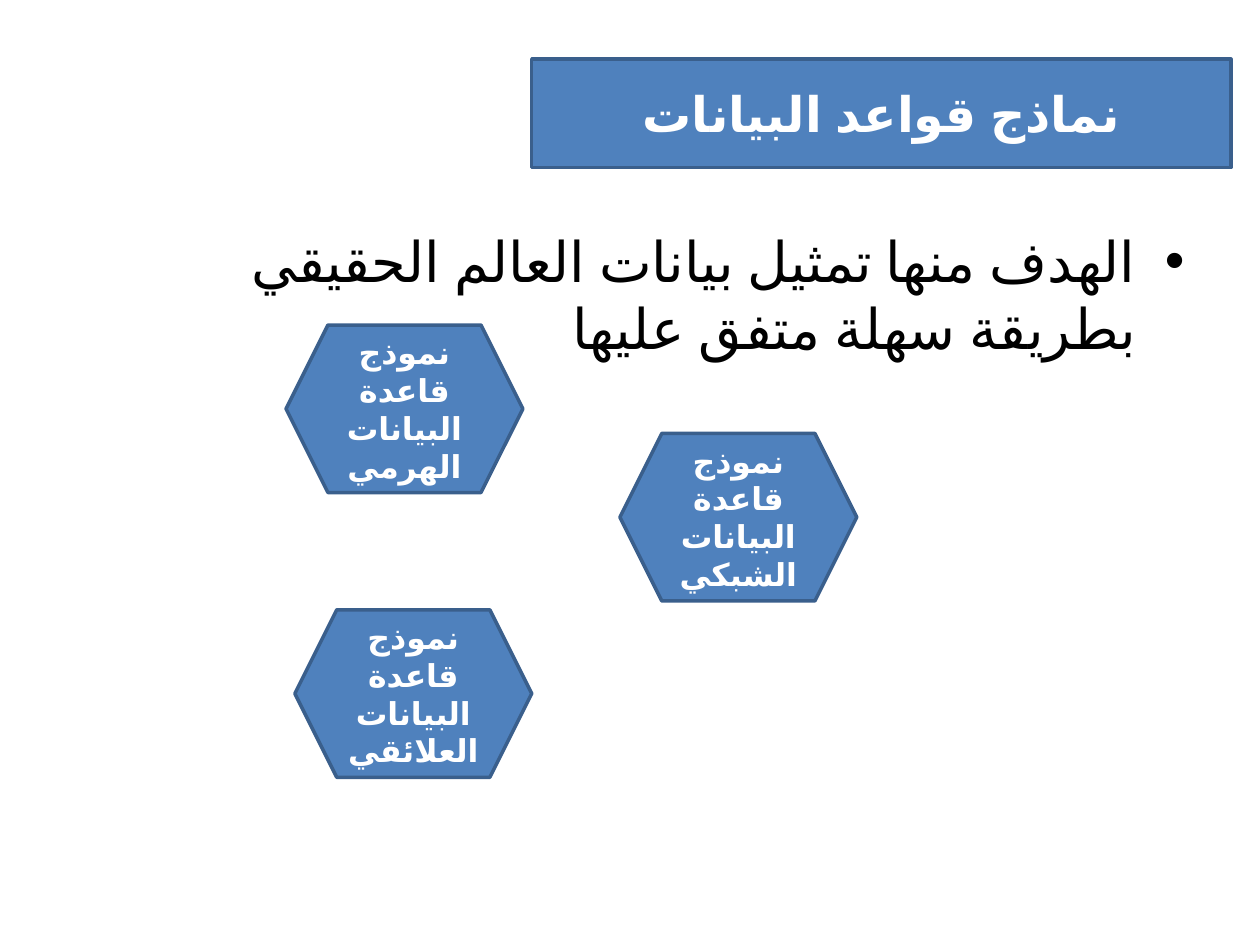
from dataclasses import dataclass

import lxml.etree
import pptx
import pptx.dml.color
import pptx.enum.lang
import pptx.enum.shapes
import pptx.enum.text
import pptx.oxml.ns
import pptx.util

SLIDE_WIDTH = pptx.util.Inches(10)
SLIDE_HEIGHT = pptx.util.Inches(7.5)
ALIGN = pptx.enum.text.PP_ALIGN
ANCHOR = pptx.enum.text.MSO_ANCHOR


@dataclass(frozen=True)
class Theme:
    font: str = "Calibri"
    fill: str = "4F81BD"
    outline: str = "3A5F8C"
    light: str = "FFFFFF"
    dark: str = "000000"
    outline_width: float = 2
    title_size: int = 28
    body_size: int = 32
    model_size: int = 18


@dataclass(frozen=True)
class Box:
    """Left, top, width and height in inches on the slide."""
    left: float
    top: float
    width: float
    height: float

    def lengths(self) -> tuple:
        return tuple(pptx.util.Inches(value) for value in
                     (self.left, self.top, self.width, self.height))


@dataclass(frozen=True)
class Model:
    name: str
    left: float
    top: float


THEME = Theme()
MODEL_WIDTH, MODEL_HEIGHT = 1.88, 1.33
MODELS = (
    Model("الهرمي", 2.27, 2.58),
    Model("الشبكي", 4.92, 3.44),
    Model("العلائقي", 2.34, 4.84),
)


def color(value: str) -> pptx.dml.color.RGBColor:
    return pptx.dml.color.RGBColor.from_string(value)


def write_arabic(shape, text: str, size: int, ink: str, bold: bool,
                 alignment, anchor):
    """Fill a shape with one right-to-left paragraph and return it."""
    frame = shape.text_frame
    frame.text = text
    frame.word_wrap = True
    frame.auto_size = pptx.enum.text.MSO_AUTO_SIZE.NONE
    frame.vertical_anchor = anchor
    paragraph = frame.paragraphs[0]
    paragraph.alignment = alignment
    paragraph._p.get_or_add_pPr().set("rtl", "1")
    font = paragraph.runs[0].font
    font.name = THEME.font
    font.size = pptx.util.Pt(size)
    font.bold = bold
    font.color.rgb = color(ink)
    font.language_id = pptx.enum.lang.MSO_LANGUAGE_ID.ARABIC
    return paragraph


def style_panel(shape, text: str, size: int) -> None:
    """Blue panel with a darker outline and centred bold text."""
    shape.fill.solid()
    shape.fill.fore_color.rgb = color(THEME.fill)
    shape.line.color.rgb = color(THEME.outline)
    shape.line.width = pptx.util.Pt(THEME.outline_width)
    write_arabic(shape, text, size, THEME.light, True, ALIGN.CENTER, ANCHOR.MIDDLE)


def add_title(slide, text: str, box: Box) -> None:
    title = slide.shapes.title
    title.left, title.top, title.width, title.height = box.lengths()
    # Rounded outline, placed right after the placeholder's position
    geometry = lxml.etree.Element(pptx.oxml.ns.qn("a:prstGeom"), prst="roundRect")
    lxml.etree.SubElement(geometry, pptx.oxml.ns.qn("a:avLst"))
    title._element.spPr.insert(1, geometry)
    style_panel(title, text, THEME.title_size)


def add_bullet_text(slide, text: str, box: Box) -> None:
    shape = slide.shapes.add_textbox(*box.lengths())
    paragraph = write_arabic(shape, text, THEME.body_size, THEME.dark, False,
                             ALIGN.RIGHT, ANCHOR.TOP)
    paragraph.space_before = pptx.util.Pt(0.2 * THEME.body_size)
    indent = pptx.util.Inches(0.38)
    properties = paragraph._p.get_or_add_pPr()
    properties.set("marL", str(indent))
    properties.set("indent", str(-indent))
    lxml.etree.SubElement(properties, pptx.oxml.ns.qn("a:buFont"), typeface="Arial")
    lxml.etree.SubElement(properties, pptx.oxml.ns.qn("a:buChar"), char="•")


def add_model(slide, model: Model) -> None:
    box = Box(model.left, model.top, MODEL_WIDTH, MODEL_HEIGHT)
    hexagon = slide.shapes.add_shape(
        pptx.enum.shapes.MSO_SHAPE.HEXAGON, *box.lengths())
    hexagon.shadow.inherit = False
    style_panel(hexagon, f"نموذج قاعدة البيانات {model.name}", THEME.model_size)


def main() -> None:
    presentation = pptx.Presentation()
    presentation.slide_width = SLIDE_WIDTH
    presentation.slide_height = SLIDE_HEIGHT
    title_only = presentation.slide_layouts.get_by_name("Title Only")
    slide = presentation.slides.add_slide(title_only)

    # Heading and purpose
    add_title(slide, "نماذج قواعد البيانات", Box(4.22, 0.47, 5.55, 0.86))
    add_bullet_text(
        slide, "الهدف منها تمثيل بيانات العالم الحقيقي بطريقة سهلة متفق عليها",
        Box(0.5, 1.75, 9, 4.95))

    # Database models
    for model in MODELS:
        add_model(slide, model)

    presentation.save("out.pptx")


if __name__ == "__main__":
    main()
